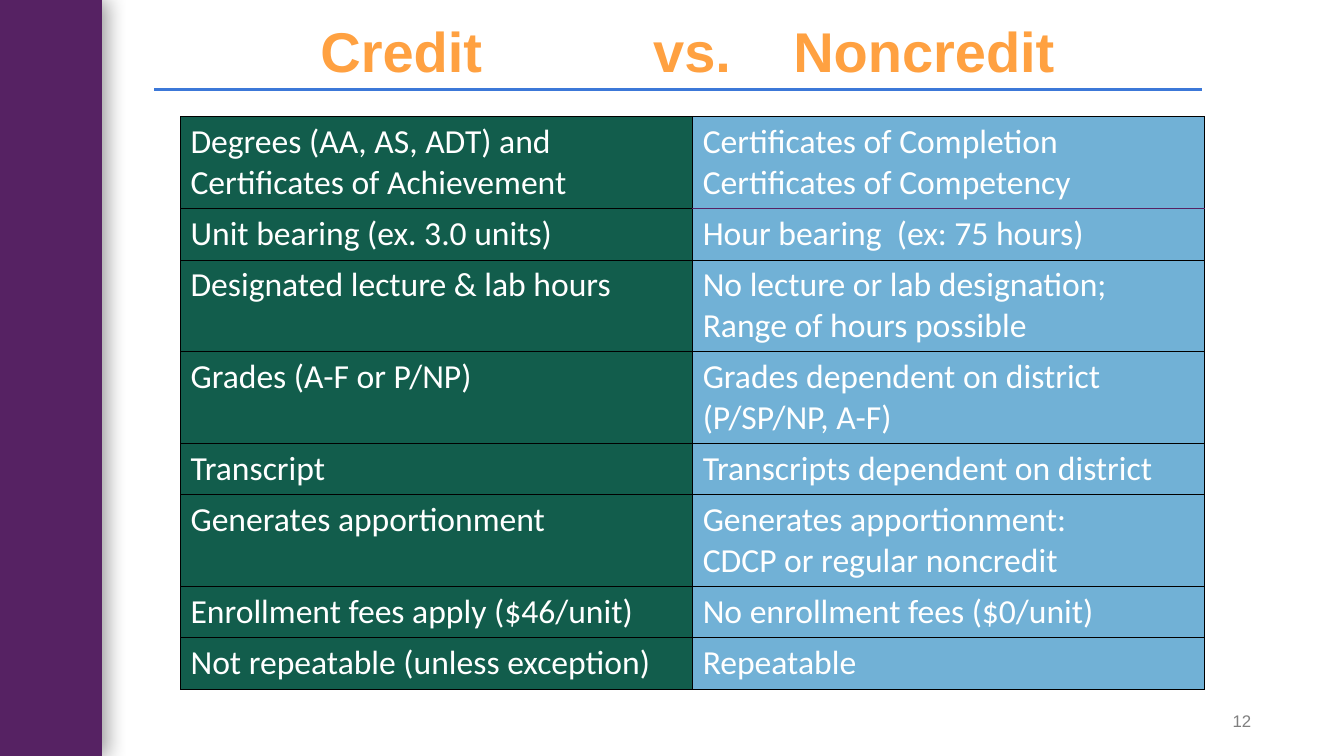
from dataclasses import dataclass

from lxml import etree
from pptx import Presentation
from pptx import util as u
from pptx.dml.color import RGBColor
from pptx.enum import shapes, text
from pptx.oxml.ns import qn


@dataclass(frozen=True)
class Theme:
    band: str = "562263"
    title: str = "FFA141"
    rule: str = "3C78D8"
    credit: str = "125D4C"
    non: str = "71B1D6"
    cell: str = "FFFFFF"
    edge: str = "000000"
    page: str = "7F7F7F"
    head: str = "Arial"
    body: str = "Calibri"
    title_size: int = 40
    cell_size: int = 24
    page_size: int = 12


T = Theme()

# Each pair is credit, noncredit; a line break starts a new paragraph
ROWS = [
    ("Degrees (AA, AS, ADT) and\nCertificates of Achievement",
     "Certificates of Completion Certificates of Competency"),
    ("Unit bearing (ex. 3.0 units)", "Hour bearing  (ex: 75 hours)"),
    ("Designated lecture & lab hours",
     "No lecture or lab designation;\nRange of hours possible"),
    ("Grades (A-F or P/NP)", "Grades dependent on district (P/SP/NP, A-F)"),
    ("Transcript", "Transcripts dependent on district"),
    ("Generates apportionment",
     "Generates apportionment:\nCDCP or regular noncredit"),
    ("Enrollment fees apply ($46/unit)", "No enrollment fees ($0/unit)"),
    ("Not repeatable (unless exception)", "Repeatable"),
]
TALL = {0, 2, 3, 5}  # rows with two lines of text


def color(code):
    return RGBColor.from_string(code)


def inches(*sizes):
    return [u.Inches(size) for size in sizes]


def sub(parent, tag, **attrs):
    return etree.SubElement(parent, qn(tag), attrs)


def style(par, face, size, code, bold=False):
    font = par.font
    font.name, font.size, font.bold = face, u.Pt(size), bold
    font.color.rgb = color(code)


def text_box(slide, box, anchor):
    frame = slide.shapes.add_textbox(*inches(*box)).text_frame
    frame.word_wrap = True
    frame.vertical_anchor = anchor
    return frame


def add_band(slide, box):
    band = slide.shapes.add_shape(shapes.MSO_SHAPE.RECTANGLE, *inches(*box))
    band.fill.solid()
    band.fill.fore_color.rgb = color(T.band)
    band.line.fill.background()
    # Soft shadow to the right
    band.shadow.inherit = False
    effects = band._element.spPr.find(qn("a:effectLst"))
    shadow = sub(effects, "a:outerShdw", blurRad=str(u.Pt(15)),
                 dist=str(u.Pt(3)), dir="0", algn="ctr", rotWithShape="0")
    tint = sub(shadow, "a:srgbClr", val="000000")
    sub(tint, "a:alpha", val="40000")


def add_title(slide, box):
    par = text_box(slide, box, text.MSO_ANCHOR.BOTTOM).paragraphs[0]
    par.text = "\tCredit\tvs.\tNoncredit"
    par.line_spacing = 0.9
    # Tab stops place the three words
    tabs = sub(par._p.get_or_add_pPr(), "a:tabLst")
    for stop in (1.68, 4.98, 6.37):
        sub(tabs, "a:tab", pos=str(u.Inches(stop)), algn="l")
    style(par, T.head, T.title_size, T.title, True)
    # Rule under the title
    left, top, width, height = box
    base = top + height
    rule = slide.shapes.add_connector(
        shapes.MSO_CONNECTOR.STRAIGHT,
        *inches(left + 0.13, base, left + width + 0.36, base))
    rule.line.color.rgb = color(T.rule)
    rule.line.width = u.Pt(2.25)
    sub(rule._element.spPr, "a:effectLst")


def add_edges(cell, codes):
    props = cell._tc.get_or_add_tcPr()
    for side, code in zip("LRTB", codes):
        line = sub(props, f"a:ln{side}", w=str(u.Pt(0.75)))
        fill = sub(line, "a:solidFill")
        sub(fill, "a:srgbClr", val=code)


def fill_cell(cell, words, fill, edges):
    add_edges(cell, edges)
    cell.fill.solid()
    cell.fill.fore_color.rgb = color(fill)
    cell.text = words
    for par in cell.text_frame.paragraphs:
        style(par, T.body, T.cell_size, T.cell)


def add_grid(slide, box):
    table = slide.shapes.add_table(len(ROWS), 2, *inches(*box)).table
    table.first_row = table.horz_banding = False
    for col in table.columns:
        col.width = u.Inches(box[2] / 2)
    for r, pair in enumerate(ROWS):
        table.rows[r].height = u.Inches(0.91 if r in TALL else 0.51)
        for c, words in enumerate(pair):
            # The line between the first two noncredit cells is purple
            top = T.band if (r, c) == (1, 1) else T.edge
            base = T.band if (r, c) == (0, 1) else T.edge
            fill_cell(table.cell(r, c), words, (T.credit, T.non)[c],
                      (T.edge, T.edge, top, base))


def add_page(slide, box):
    frame = text_box(slide, box, text.MSO_ANCHOR.MIDDLE)
    frame.margin_right = 0
    par = frame.paragraphs[0]
    par.text = "12"
    par.alignment = text.PP_ALIGN.RIGHT
    style(par, T.head, T.page_size, T.page)


def main():
    deck = Presentation()
    deck.slide_width, deck.slide_height = inches(13.33, 7.5)
    slide = deck.slides.add_slide(deck.slide_layouts[6])
    add_band(slide, (0, 0, 1.01, 7.5))
    add_page(slide, (11.41, 6.95, 1, 0.4))
    add_grid(slide, (1.79, 1.16, 10.16, 5.68))
    add_title(slide, (1.4, 0.17, 10.16, 0.72))
    deck.save("out.pptx")


if __name__ == "__main__":
    main()
